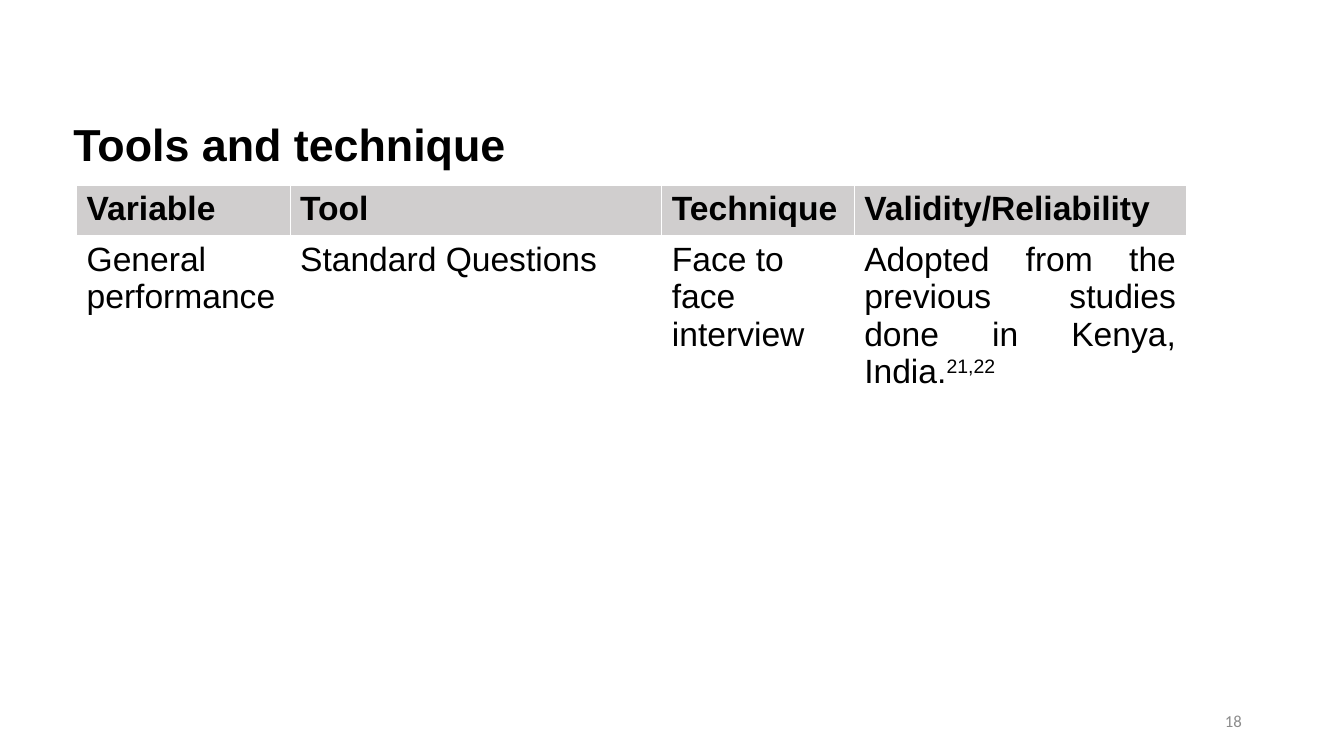
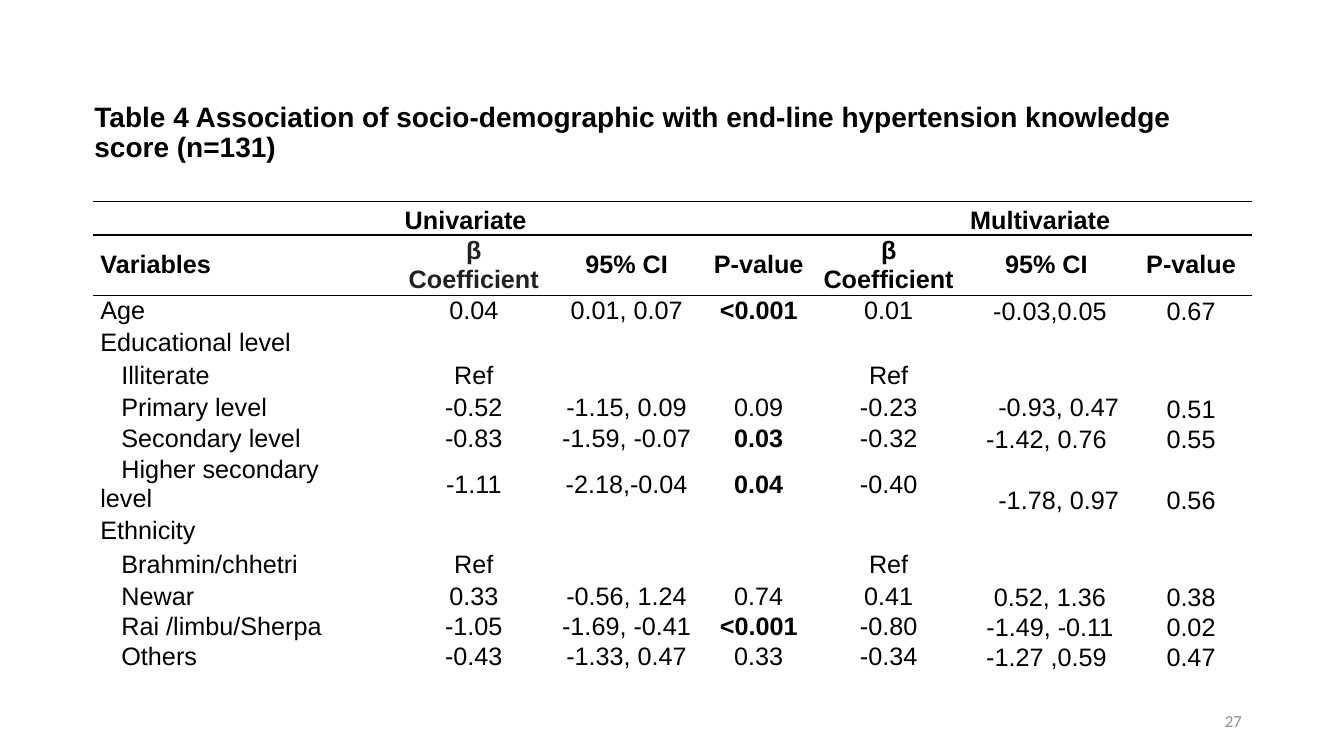
from dataclasses import dataclass
from typing import Optional

from lxml import etree
from pptx import Presentation
from pptx.dml.color import RGBColor
from pptx.enum.text import MSO_ANCHOR, PP_ALIGN
from pptx.oxml.ns import qn
from pptx.util import Cm, Pt

LEFT, MID, RIGHT, FULL = (PP_ALIGN.LEFT, PP_ALIGN.CENTER,
                          PP_ALIGN.RIGHT, PP_ALIGN.JUSTIFY)
TOP, HALF, LOW = MSO_ANCHOR.TOP, MSO_ANCHOR.MIDDLE, MSO_ANCHOR.BOTTOM

# Shared look
BLACK, WHITE, GREY, SHADE, INK = "000000", "FFFFFF", "8C8C8C", "D0CECE", "202124"
FONT, SMALL = "Arial", "Calibri"
BLANK = 6
STEP, NUDGE = 0.53, 0.18  # first-line indents in cm


@dataclass(frozen=True)
class Box:
    x: float
    y: float
    w: float
    h: float


@dataclass(frozen=True)
class Style:
    size: float
    bold: bool = False
    color: str = BLACK
    font: str = FONT
    align: PP_ALIGN = LEFT


@dataclass(frozen=True)
class Item:
    """One table cell; None leaves the choice to its table."""
    text: str = ""
    bold: Optional[bool] = None
    align: Optional[PP_ALIGN] = None
    anchor: Optional[MSO_ANCHOR] = None
    indent: float = 0
    color: str = BLACK
    note: str = ""


@dataclass(frozen=True)
class Edge:
    color: str
    width: float


def paint(code: str) -> RGBColor:
    return RGBColor.from_string(code)


def format_text(frame, style: Style, spacing: Optional[float] = None) -> None:
    for par in frame.paragraphs:
        par.alignment = style.align
        if spacing:
            par.line_spacing = spacing
        for run in par.runs:
            run.font.name, run.font.size = style.font, Pt(style.size)
            run.font.bold = style.bold
            run.font.color.rgb = paint(style.color)


def add_label(slide, text: str, box: Box, style: Style,
              spacing: Optional[float] = None) -> None:
    shape = slide.shapes.add_textbox(Cm(box.x), Cm(box.y), Cm(box.w), Cm(box.h))
    frame = shape.text_frame
    frame.word_wrap, frame.vertical_anchor = True, HALF
    frame.text = text
    format_text(frame, style, spacing)


def new_slide(deck, title: str, box: Box, size: float, page: str):
    slide = deck.slides.add_slide(deck.slide_layouts[BLANK])
    add_label(slide, title, box, Style(size, True), 0.9)
    add_label(slide, page, Box(23.93, 17.65, 7.62, 1.02),
              Style(12, False, GREY, SMALL, RIGHT))
    return slide


# Tables
def set_edges(cell, edges: dict[str, Edge]) -> None:
    props = cell._tc.get_or_add_tcPr()
    for side in "LRTB":
        line = etree.SubElement(props, qn(f"a:ln{side}"))
        if side in edges:
            line.set("w", str(Pt(edges[side].width)))
            fill = etree.SubElement(line, qn("a:solidFill"))
            etree.SubElement(fill, qn("a:srgbClr")).set("val", edges[side].color)
        else:
            etree.SubElement(line, qn("a:noFill"))


def add_grid(slide, x: float, y: float, wide: list[float], high: list[float]):
    grid = slide.shapes.add_table(len(high), len(wide), Cm(x), Cm(y),
                                  Cm(sum(wide)), Cm(sum(high))).table
    grid.first_row = grid.horz_banding = False
    for col, width in zip(grid.columns, wide):
        col.width = Cm(width)
    for row, height in zip(grid.rows, high):
        row.height = Cm(height)
    return grid


def fill_cell(cell, item: Item, style: Style, anchor: MSO_ANCHOR,
              edges: dict[str, Edge], back: str) -> None:
    set_edges(cell, edges)
    cell.fill.solid()
    cell.fill.fore_color.rgb = paint(back)
    cell.vertical_anchor = anchor if item.anchor is None else item.anchor
    frame = cell.text_frame
    frame.text = item.text
    par = frame.paragraphs[0]
    if item.note:
        note = par.add_run()
        note.text = item.note
        note._r.get_or_add_rPr().set("baseline", "30000")
    if item.indent:
        props = par._p.get_or_add_pPr()
        props.set("marL", "0")
        props.set("indent", str(Cm(item.indent)))
    bold = style.bold if item.bold is None else item.bold
    align = style.align if item.align is None else item.align
    format_text(frame, Style(style.size, bold, item.color, align=align))


def as_item(value: "str | Item") -> Item:
    return value if isinstance(value, Item) else Item(value)


def sub(text: str) -> Item:
    return Item(text, indent=STEP)


def strong(text: str) -> Item:
    return Item(text, bold=True)


def nudge(text: str) -> Item:
    return Item(text, indent=NUDGE)


def shift(text: str, anchor: MSO_ANCHOR) -> Item:
    return Item(text, align=LEFT, anchor=anchor, indent=0.71)


TOOLS = [
    ["Variable", "Tool", "Technique", "Validity/Reliability"],
    ["General performance", "Standard Questions", "Face to face interview",
     Item("Adopted from the previous studies done in Kenya, India.",
          align=FULL, note="21,22")],
]

BETA = "β Coefficient"
SCORES = [
    ["", Item("Univariate", align=LEFT, anchor=LOW), "", "", "",
     Item("Multivariate", align=LEFT, anchor=LOW), ""],
    ["Variables", Item(BETA, color=INK), "95% CI", "P-value",
     BETA, "95% CI", "P-value"],
    ["Age", "0.04", "0.01, 0.07", strong("<0.001"), "0.01",
     nudge("-0.03,0.05"), "0.67"],
    ["Educational level"] + [""] * 6,
    [sub("Illiterate"), "Ref", "", "", "Ref", "", ""],
    [sub("Primary level"), "-0.52", "-1.15, 0.09", "0.09", "-0.23",
     shift("-0.93, 0.47", HALF), "0.51"],
    [sub("Secondary level"), "-0.83", "-1.59, -0.07", strong("0.03"), "-0.32",
     "-1.42, 0.76", "0.55"],
    [sub("Higher secondary\vlevel"), "-1.11", "-2.18,-0.04", strong("0.04"),
     "-0.40", shift("-1.78, 0.97", LOW), "0.56"],
    ["Ethnicity"] + [""] * 6,
    [sub("Brahmin/chhetri"), "Ref", "", "", "Ref", "", ""],
    [sub("Newar"), "0.33", "-0.56, 1.24", "0.74", "0.41",
     nudge("0.52, 1.36"), "0.38"],
    [sub("Rai /limbu/Sherpa"), "-1.05", "-1.69, -0.41", strong("<0.001"),
     "-0.80", nudge("-1.49, -0.11"), "0.02"],
    [sub("Others"), "-0.43", "-1.33, 0.47", "0.33", "-0.34",
     "-1.27 ,0.59", "0.47"],
]


def draw_tools(deck) -> None:
    slide = new_slide(deck, "Tools and technique",
                      Box(1.6, 2.57, 29.21, 2.29), 32, "18")
    grid = add_grid(slide, 1.93, 4.67, [5.38, 9.37, 4.85, 8.36], [1.18, 4.72])
    thin, thick = Edge(WHITE, 0.75), Edge(WHITE, 1.75)
    for r, row in enumerate(TOOLS):
        head = r == 0
        edges = {"L": thin, "R": thin, "T": thin if head else thick,
                 "B": thick if head else thin}
        for c, value in enumerate(row):
            fill_cell(grid.cell(r, c), as_item(value), Style(24, head), TOP,
                      edges, SHADE if head else WHITE)


def draw_scores(deck) -> None:
    slide = new_slide(deck, "Table 4 Association of socio-demographic with "
                      "end-line hypertension knowledge score (n=131)",
                      Box(2.13, 2.01, 28.93, 2.72), 20, "27")
    grid = add_grid(slide, 2.34, 5.08,
                    [7.67, 3.86, 3.84, 2.82, 3.73, 4.22, 3.07],
                    [0.84, 1.4, 0.71, 0.84, 0.84, 0.79, 0.71,
                     1.4, 0.84, 0.84, 0.71, 0.74, 0.71])
    rule = Edge(BLACK, 1)
    for r, row in enumerate(SCORES):
        head = r < 2
        edges = {"T": rule, "B": rule} if head else {"T": rule} if r == 2 else {}
        for c, value in enumerate(row):
            cell = grid.cell(r, c)
            cell.margin_top = cell.margin_bottom = 0
            cell.margin_left = cell.margin_right = Cm(0.19)
            style = Style(18, head, align=MID if c else LEFT)
            anchor = LOW if c > 4 and not head else HALF
            fill_cell(cell, as_item(value), style, anchor, edges, WHITE)


def main() -> None:
    deck = Presentation()
    deck.slide_width, deck.slide_height = Cm(33.87), Cm(19.05)
    draw_tools(deck)
    draw_scores(deck)
    deck.save("out.pptx")


if __name__ == "__main__":
    main()
